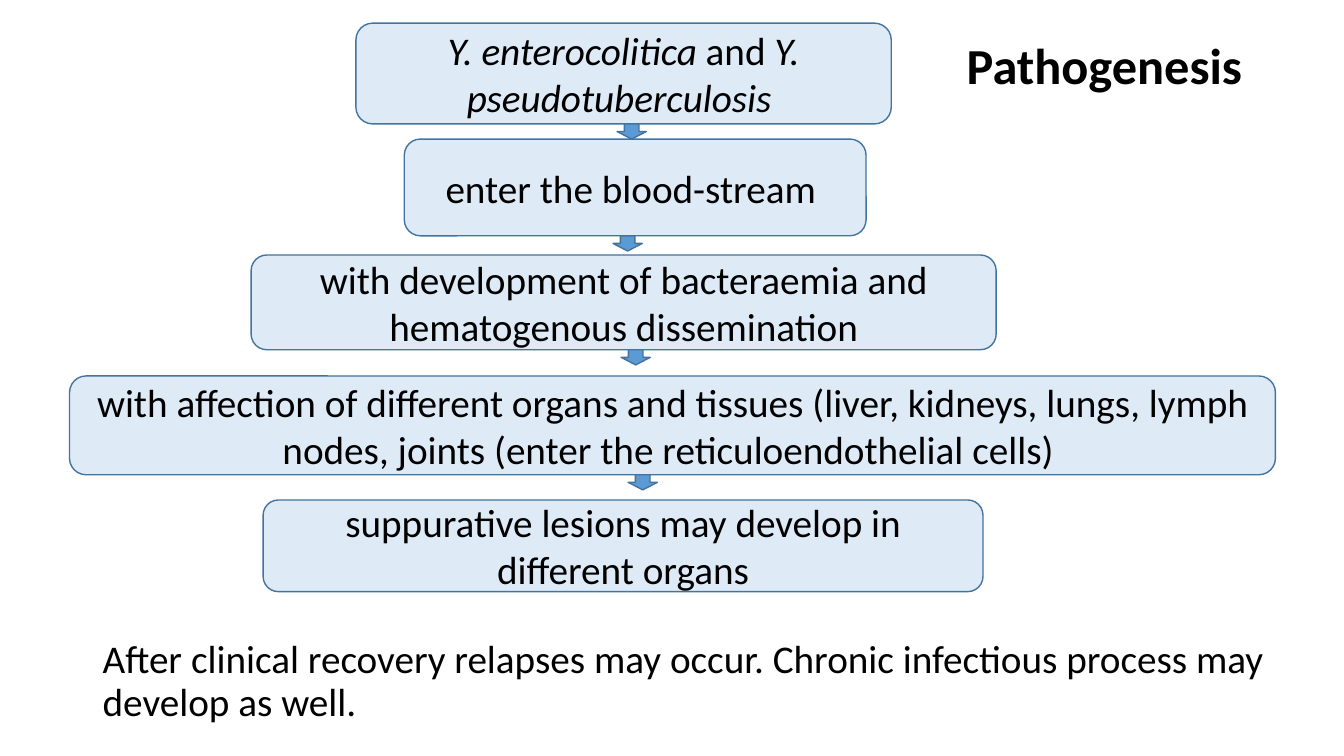
from dataclasses import dataclass

from pptx import Presentation
from pptx.dml.color import RGBColor
from pptx.enum.shapes import MSO_SHAPE
from pptx.enum.text import MSO_ANCHOR, PP_ALIGN
from pptx.util import Pt

ROUNDED, DOWN_ARROW = MSO_SHAPE.ROUNDED_RECTANGLE, MSO_SHAPE.DOWN_ARROW
LEFT, CENTER, RIGHT = PP_ALIGN.LEFT, PP_ALIGN.CENTER, PP_ALIGN.RIGHT
TOP, MIDDLE = MSO_ANCHOR.TOP, MSO_ANCHOR.MIDDLE
BLANK_LAYOUT = 6
EMU_PER_PX = 9144
SLIDE_SIZE = (1333, 750)
ARROW_SIZE = (29, 15)


@dataclass(frozen=True)
class Theme:
    """Colours, font and type sizes of the slide."""
    font: str = "Calibri"
    text: str = "000000"
    step_fill: str = "DEEBF7"
    arrow_fill: str = "5B9BD5"
    outline: str = "43739E"
    title_size: int = 36
    body_size: int = 28
    line_width: int = 1


THEME = Theme()

STEPS = [
    ((353, 23, 531, 100), [("Y. enterocolitica", True), (" and ", False),
                           ("Y. pseudotuberculosis ", True)]),
    ((401, 138, 458, 96), [("enter the blood-stream ", False)]),
    ((249, 253, 739, 94), [("with development of bacteraemia and "
                            "hematogenous dissemination", False)]),
    ((69, 373, 1196, 98), [("with affection of different organs and tissues "
                            "(liver, kidneys, lungs, lymph nodes, joints "
                            "(enter the reticuloendothelial cells) ", False)]),
    ((261, 496, 714, 91), [("suppurative lesions may develop in "
                            "different organs", False)]),
]
ARROW_LEFTS = [612, 608, 616, 623]


def px(*lengths):
    """Turn px lengths into EMU."""
    return [length * EMU_PER_PX for length in lengths]


def write_text(shape, runs, size=THEME.body_size, bold=False, align=LEFT,
               anchor=TOP, line_spacing=1.0, space_before=0):
    """Fill a shape with one paragraph of (text, italic) runs."""
    frame = shape.text_frame
    frame.word_wrap = True
    frame.vertical_anchor = anchor
    paragraph = frame.paragraphs[0]
    paragraph.alignment = align
    paragraph.line_spacing = line_spacing
    paragraph.space_before = Pt(space_before)
    for text, italic in runs:
        run = paragraph.add_run()
        run.text = text
        run.font.name = THEME.font
        run.font.size = Pt(size)
        run.font.bold = bold
        run.font.italic = italic
        run.font.color.rgb = RGBColor.from_string(THEME.text)


def add_outlined_shape(slide, kind, box, fill):
    """Add a filled preset shape with the common outline."""
    shape = slide.shapes.add_shape(kind, *px(*box))
    shape.shadow.inherit = False
    shape.fill.solid()
    shape.fill.fore_color.rgb = RGBColor.from_string(fill)
    shape.line.color.rgb = RGBColor.from_string(THEME.outline)
    shape.line.width = Pt(THEME.line_width)
    return shape


def add_title(slide, box):
    """Place the right-aligned slide title."""
    write_text(slide.shapes.add_textbox(*px(*box)), [("Pathogenesis", False)],
               size=THEME.title_size, bold=True, align=RIGHT, anchor=MIDDLE,
               line_spacing=0.9)


def add_outcome(slide, box):
    """Place the closing remark below the flow."""
    remark = ("After clinical recovery relapses may occur. "
              "Chronic infectious process may develop as well.")
    write_text(slide.shapes.add_textbox(*px(*box)), [(remark, False)],
               line_spacing=0.9, space_before=10)


def add_step(slide, box, runs):
    """Place one rounded step of the flow."""
    shape = add_outlined_shape(slide, ROUNDED, box, THEME.step_fill)
    write_text(shape, runs, align=CENTER, anchor=MIDDLE)


def add_arrow_below(slide, box, left):
    """Hang an arrow from the bottom edge of a step box."""
    _, top, _, height = box
    add_outlined_shape(slide, DOWN_ARROW, (left, top + height, *ARROW_SIZE),
                       THEME.arrow_fill)


def main():
    """Build the slide and save it."""
    presentation = Presentation()
    presentation.slide_width, presentation.slide_height = px(*SLIDE_SIZE)
    slide = presentation.slides.add_slide(
        presentation.slide_layouts[BLANK_LAYOUT])
    add_title(slide, (92, 25, 1150, 85))
    add_outcome(slide, (92, 630, 1208, 120))
    for box, runs in STEPS:
        add_step(slide, box, runs)
    for (box, _), left in zip(STEPS, ARROW_LEFTS):
        add_arrow_below(slide, box, left)
    presentation.save("out.pptx")


if __name__ == "__main__":
    main()
